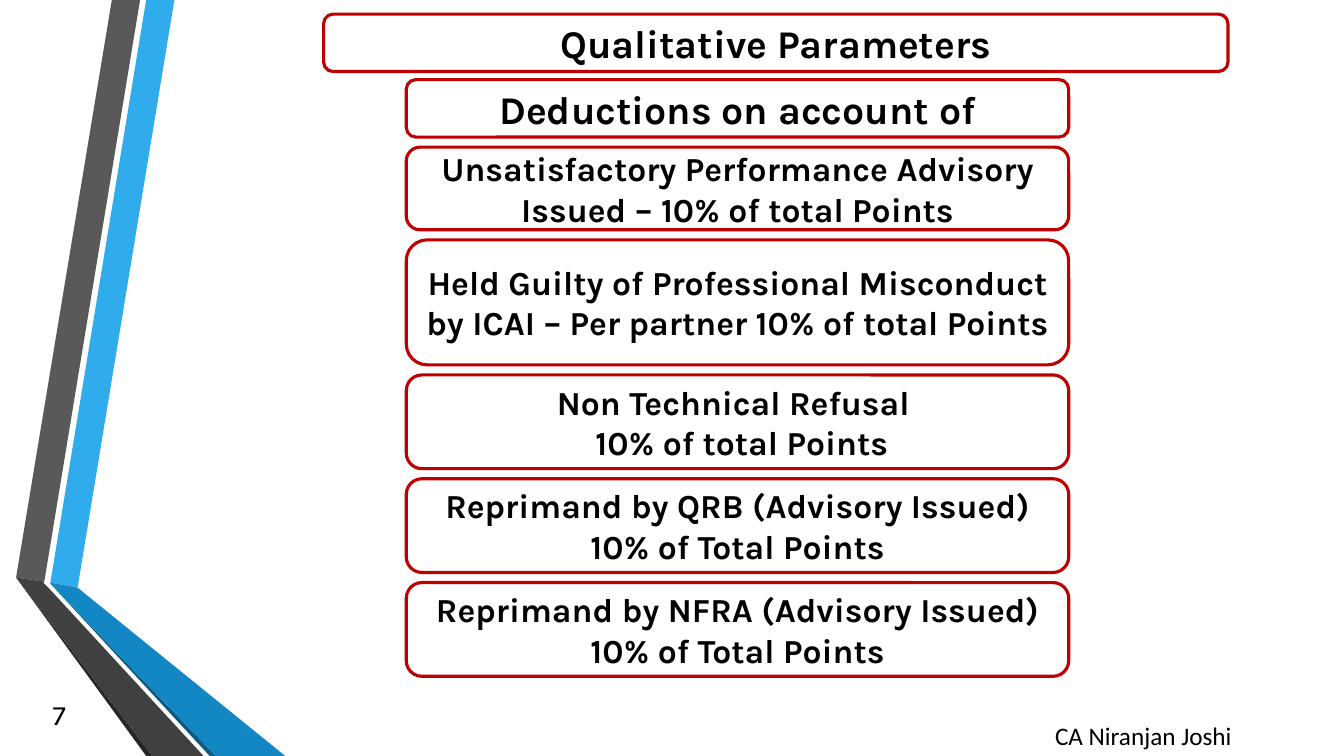
from pptx import Presentation
from pptx.dml.color import RGBColor
from pptx.enum.shapes import MSO_SHAPE
from pptx.enum.text import MSO_ANCHOR, PP_ALIGN
from pptx.util import Pt

PX = 9144  # 100 px to the inch
ROUND = MSO_SHAPE.ROUNDED_RECTANGLE
TOP, MIDDLE = MSO_ANCHOR.TOP, MSO_ANCHOR.MIDDLE
CENTER, RIGHT = PP_ALIGN.CENTER, PP_ALIGN.RIGHT

BLACK = RGBColor(0x00, 0x00, 0x00)
RED = RGBColor(0xC0, 0x00, 0x00)
SKY = RGBColor(0x30, 0xAC, 0xEC)
BLUE = RGBColor(0x12, 0x87, 0xC3)
NAVY = RGBColor(0x0C, 0x5A, 0x82)
GRAY = RGBColor(0x59, 0x59, 0x59)
DARK = RGBColor(0x40, 0x40, 0x40)
COAL = RGBColor(0x26, 0x26, 0x26)

# Content
TITLE = "Qualitative Parameters"
HEAD = "Deductions on account of"
ITEMS = [  # lines, box height
    (["Unsatisfactory Performance Advisory Issued – 10% of total Points"], 82),
    (["Held Guilty of Professional Misconduct by ICAI – Per partner 10% of total Points"], 124),
    (["Non Technical Refusal ", " 10% of total Points"], 93),
    (["Reprimand by QRB (Advisory Issued) 10% of Total Points"], 93),
    (["Reprimand by NFRA (Advisory Issued) 10% of Total Points"], 93),
]
NUMBER = "7"
AUTHOR = "CA Niranjan Joshi"

BANDS = [
    (SKY, [(50, 578), (77, 583), (173, 0), (145, 0)]),
    (GRAY, [(139, 0), (111, 0), (16, 573), (44, 577)]),
    (COAL, [(16, 573), (145, 750), (151, 750)]),
    (NAVY, [(50, 579), (208, 750), (214, 750)]),
    (BLUE, [(50, 579), (214, 750), (283, 750), (77, 583), (50, 578)]),
    (DARK, [(202, 750), (48, 583), (43, 578), (44, 577), (16, 573), (151, 750)]),
]

# Layout
HIGH, GAP = 57, 10
LEFT, START, WIDE = 403, 79, 657

deck = Presentation()
deck.slide_width, deck.slide_height = 1333 * PX, 750 * PX
slide = deck.slides.add_slide(deck.slide_layouts[6])
shapes = slide.shapes


def write(shape, lines, size, font="Karla", bold=False, align=CENTER, anchor=MIDDLE):
    frame = shape.text_frame
    frame.word_wrap = True
    frame.vertical_anchor = anchor
    frame.text = "\n".join(lines)
    for para in frame.paragraphs:
        para.alignment = align
        para.font.name = font
        para.font.size = Pt(size)
        para.font.bold = bold
        para.font.color.rgb = BLACK


def add_box(area, lines, size):
    box = shapes.add_shape(ROUND, *(n * PX for n in area))
    box.shadow.inherit = False
    box.fill.background()
    box.line.color.rgb = RED
    box.line.width = Pt(2.25)
    write(box, lines, size, bold=True)


def add_label(area, text, size, **style):
    label = shapes.add_textbox(*(n * PX for n in area))
    write(label, [text], size, **style)


# Side ribbon
for color, points in BANDS:
    pen = shapes.build_freeform(*points[0], scale=PX)
    pen.add_line_segments(points[1:], close=True)
    band = pen.convert_to_shape()
    band.shadow.inherit = False
    band.fill.solid()
    band.fill.fore_color.rgb = color
    band.line.fill.background()

# Slide number and author
add_label((15, 689, 60, 40), NUMBER, 20, align=RIGHT)
add_label((959, 710, 350, 40), AUTHOR, 18, font="Calibri", anchor=TOP)

# Title, then the stack of boxes
add_box((321, 14, 897, HIGH), [TITLE], 28)
add_box((LEFT, START, WIDE, HIGH), [HEAD], 28)
top = START + HIGH + GAP
for lines, high in ITEMS:
    add_box((LEFT, top, WIDE, high), lines, 24)
    top += high + GAP

deck.save("out.pptx")
